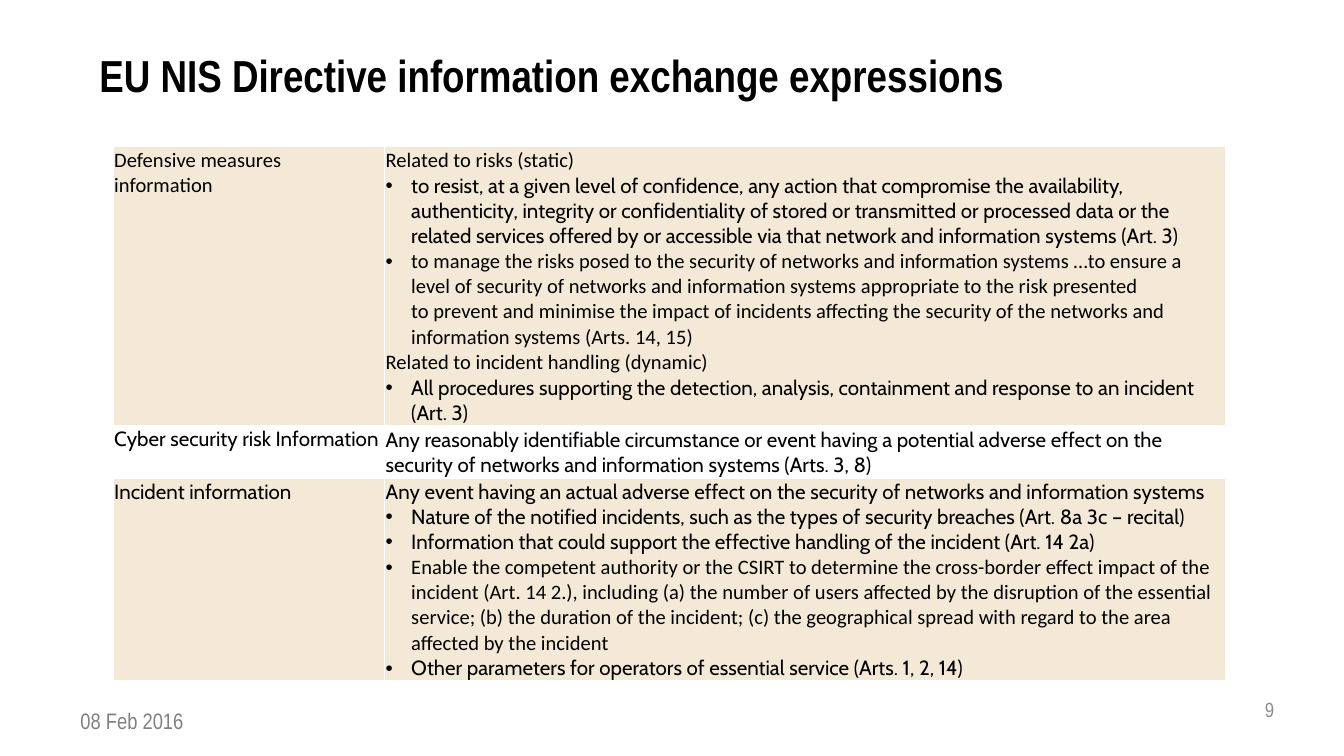
import copy

import pptx
import pptx.dml.color
import pptx.enum.text
import pptx.oxml
import pptx.oxml.ns
import pptx.util

Inches = pptx.util.Inches
Pt = pptx.util.Pt
qn = pptx.oxml.ns.qn
ALIGN = pptx.enum.text.PP_ALIGN
ANCHOR = pptx.enum.text.MSO_ANCHOR

THEME = {
    "title": {"name": "Arial Narrow", "size": 24, "color": "000000", "bold": True},
    "date": {"name": "Arial Narrow", "size": 12, "color": "808080"},
    "page": {"name": "Arial Narrow", "size": 11, "color": "8C8C8C"},
    "calibri": {"name": "Calibri", "size": 11, "color": "000000"},
    "cabin": {"name": "Cabin", "size": 11, "color": "000000"},
    "band": "F4E9D6",
    "rule": "FFFFFF",
}

TITLE = "EU NIS Directive information exchange expressions"
DATE = "08 Feb 2016"
PAGE = "9"

# Each row: label, then details; each line: style, bulleted, text
ROWS = [
    (
        [("calibri", False, "Defensive measures information")],
        [
            ("calibri", False, "Related to risks (static)"),
            ("cabin", True, "to resist, at a given level of confidence, any action that "
             "compromise the availability, authenticity, integrity or confidentiality of "
             "stored or transmitted or processed data or the related services offered by "
             "or accessible via that network and information systems (Art. 3)"),
            ("calibri", True, "to manage the risks posed to the security of networks and "
             "information systems …to ensure a level of security of networks and "
             "information systems appropriate to the risk presented\n"
             "to prevent and minimise the impact of incidents affecting the security of "
             "the networks and information systems (Arts. 14, 15)"),
            ("calibri", False, "Related to incident handling (dynamic)"),
            ("cabin", True, "All procedures supporting the detection, analysis, "
             "containment and response to an incident (Art. 3)"),
        ],
    ),
    (
        [("cabin", False, "Cyber security risk Information")],
        [("cabin", False, "Any reasonably identifiable circumstance or event having a "
          "potential adverse effect on the security of networks and information systems "
          "(Arts. 3, 8)")],
    ),
    (
        [("cabin", False, "Incident information")],
        [
            ("cabin", False, "Any event having an actual adverse effect on the security "
             "of networks and information systems"),
            ("cabin", True, "Nature of the notified incidents, such as the types of "
             "security breaches (Art. 8a 3c – recital)"),
            ("cabin", True, "Information that could support the effective handling of "
             "the incident (Art. 14 2a)"),
            ("calibri", True, "Enable the competent authority or the CSIRT to determine "
             "the cross-border effect impact of the incident (Art. 14 2.), including (a) "
             "the number of users affected by the disruption of the essential service; "
             "(b) the duration of the incident; (c) the geographical spread with regard "
             "to the area affected by the incident"),
            ("cabin", True, "Other parameters for operators of essential service "
             "(Arts. 1, 2, 14)"),
        ],
    ),
]
WIDE = 10
TALL = WIDE * 9 / 16
WIDTHS = [2.02, 6.26]
HEIGHTS = [2.05, 0.39, 1.45]
INDENT = 0.19


def rgb(code):
    return pptx.dml.color.RGBColor.from_string(code)


def write(para, text, style):
    para.text = text
    for run in para.runs:
        look = dict(THEME[style])
        run.font.color.rgb = rgb(look.pop("color"))
        look["size"] = Pt(look["size"])
        for key, value in look.items():
            setattr(run.font, key, value)
    # A line break takes the size of its neighbours
    for gap in para._p.findall(qn("a:br")):
        gap.append(copy.deepcopy(para.runs[0]._r.rPr))


def bullet(para):
    props = para._p.get_or_add_pPr()
    props.set("marL", str(Inches(INDENT)))
    props.set("indent", str(-Inches(INDENT)))
    for tag, key, value in (("buFont", "typeface", "Arial"), ("buChar", "char", "•")):
        props.append(props.makeelement(qn("a:" + tag), {key: value}))


def border(cell):
    props = cell._tc.get_or_add_tcPr()
    for place, tag in enumerate(("lnL", "lnR", "lnT", "lnB")):
        line = pptx.oxml.parse_xml(
            f'<a:{tag} xmlns:a="http://schemas.openxmlformats.org/drawingml/2006/main" '
            f'w="{Pt(1)}"><a:solidFill><a:srgbClr val="{THEME["rule"]}"/>'
            f'</a:solidFill></a:{tag}>')
        props.insert(place, line)


def label(shape, text, style, align, anchor):
    frame = shape.text_frame
    form = {"word_wrap": True, "vertical_anchor": anchor,
            "auto_size": pptx.enum.text.MSO_AUTO_SIZE.NONE}
    for key, value in form.items():
        setattr(frame, key, value)
    write(frame.paragraphs[0], text, style)
    frame.paragraphs[0].alignment = align


def fill(cell, lines, anchor, band):
    form = {"margin_left": Inches(0.01), "margin_right": Inches(0.01),
            "margin_top": Inches(0.01), "margin_bottom": 0, "vertical_anchor": anchor}
    for key, value in form.items():
        setattr(cell, key, value)
    if band:
        cell.fill.solid()
        cell.fill.fore_color.rgb = rgb(THEME["band"])
    else:
        cell.fill.background()
    border(cell)
    frame = cell.text_frame
    for place, (style, dot, text) in enumerate(lines):
        para = frame.add_paragraph() if place else frame.paragraphs[0]
        if dot:
            bullet(para)
        write(para, text, style)


def main():
    deck = pptx.Presentation()
    deck.slide_width, deck.slide_height = Inches(WIDE), Inches(TALL)
    slide = deck.slides.add_slide(deck.slide_layouts[5])

    title = slide.shapes.title
    spot = {"left": 0.64, "top": 0.31, "width": 7.61, "height": 0.49}
    for key, value in spot.items():
        setattr(title, key, Inches(value))
    label(title, TITLE, "title", ALIGN.LEFT, ANCHOR.MIDDLE)

    for text, style, box, align, anchor in (
        (DATE, "date", (0.5, 5.21, 1.63, 0.26), ALIGN.LEFT, ANCHOR.TOP),
        (PAGE, "page", (8.83, 5.13, 0.75, 0.3), ALIGN.RIGHT, ANCHOR.MIDDLE),
    ):
        shape = slide.shapes.add_textbox(*map(Inches, box))
        label(shape, text, style, align, anchor)

    grid = slide.shapes.add_table(
        len(ROWS), len(WIDTHS), Inches(0.84), Inches(1.09),
        Inches(sum(WIDTHS)), Inches(sum(HEIGHTS))).table
    grid.first_row = grid.horz_banding = False
    for col, width in zip(grid.columns, WIDTHS):
        col.width = Inches(width)
    for place, (row, height) in enumerate(zip(grid.rows, HEIGHTS)):
        row.height = Inches(height)
        for cell, lines, anchor in zip(row.cells, ROWS[place], (ANCHOR.TOP, ANCHOR.BOTTOM)):
            fill(cell, lines, anchor, place % 2 == 0)

    deck.save("out.pptx")


if __name__ == "__main__":
    main()
